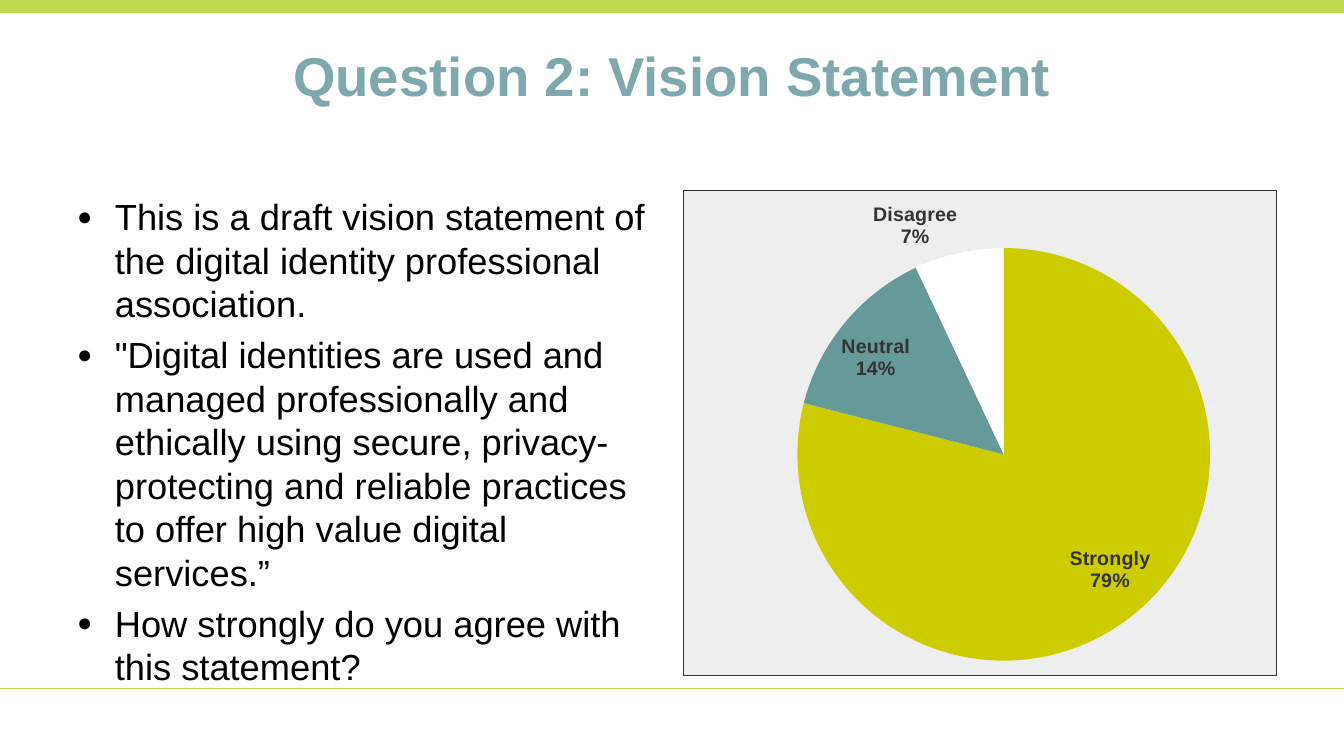
from dataclasses import dataclass

from lxml.etree import SubElement
from pptx import Presentation
from pptx.chart.data import CategoryChartData
from pptx.dml.color import RGBColor
from pptx.enum.chart import XL_CHART_TYPE, XL_LABEL_POSITION
from pptx.enum.shapes import MSO_CONNECTOR, MSO_SHAPE
from pptx.enum.text import MSO_ANCHOR, PP_ALIGN
from pptx.oxml import parse_xml
from pptx.oxml.ns import nsdecls, qn
from pptx.util import Pt


@dataclass(frozen=True)
class Theme:
    font: str = "Arial"
    chart_font: str = "Roboto"
    lime: str = "BAD94B"
    title: str = "7EA8AD"
    body: str = "000000"
    label: str = "333333"
    panel: str = "EEEEEE"
    slices: tuple = ("CCCC00", "669999", "FFFFFF")
    title_size: float = 39
    body_size: float = 25.9
    chart_size: float = 10
    label_size: float = 14


THEME = Theme()
SLIDE_W, SLIDE_H = 960, 540
MARGIN = 48
CONTENT_TOP, CONTENT_W, CONTENT_H = 135.5, 424, 347

BULLETS = [
    "This is a draft vision statement of the digital identity professional association.",
    "\"Digital identities are used and managed professionally and ethically using secure, "
    "privacy-protecting and reliable practices to offer high value digital services.”",
    "How strongly do you agree with this statement?",
]
ANSWERS = {"Strongly": 79, "Neutral": 14, "Disagree": 7}


def style_font(font, size, color, bold=False, name=THEME.font):
    font.name, font.size, font.bold = name, Pt(size), bold
    font.color.rgb = RGBColor.from_string(color)


def add_bar(s, height):
    sp = s.shapes.add_shape(MSO_SHAPE.RECTANGLE, 0, 0, Pt(SLIDE_W), Pt(height))
    sp.shadow.inherit = False
    sp.fill.solid()
    sp.fill.fore_color.rgb = RGBColor.from_string(THEME.lime)
    sp.line.fill.background()


def add_rule(s, y):
    line = s.shapes.add_connector(MSO_CONNECTOR.STRAIGHT, 0, Pt(y), Pt(SLIDE_W), Pt(y))
    line.line.color.rgb = RGBColor.from_string(THEME.lime)
    line.line.width = Pt(0.5)
    SubElement(line._element.spPr, qn("a:effectLst"))


def add_text_box(s, x, y, w, h):
    tf = s.shapes.add_textbox(Pt(x), Pt(y), Pt(w), Pt(h)).text_frame
    tf.word_wrap = True
    return tf


def add_title(s, text):
    tf = add_text_box(s, MARGIN, 12, SLIDE_W - 2 * MARGIN, 83)
    tf.vertical_anchor = MSO_ANCHOR.MIDDLE
    p = tf.paragraphs[0]
    p.text = text
    p.alignment = PP_ALIGN.CENTER
    style_font(p.runs[0].font, THEME.title_size, THEME.title, bold=True)


def add_bullets(s, items):
    tf = add_text_box(s, MARGIN, CONTENT_TOP, CONTENT_W, CONTENT_H)
    for i, item in enumerate(items):
        p = tf.paragraphs[0] if i == 0 else tf.add_paragraph()
        p.text = item
        p.space_before = Pt(5.2 if i else 0)
        pPr = p._p.get_or_add_pPr()
        pPr.set("marL", str(Pt(27)))
        pPr.set("indent", str(Pt(-27)))
        SubElement(pPr, qn("a:buSzPct"), val="70000")
        SubElement(pPr, qn("a:buFont"), typeface=THEME.font)
        SubElement(pPr, qn("a:buChar"), char="●")
        style_font(p.runs[0].font, THEME.body_size, THEME.body)


def panel_properties(border=""):
    return parse_xml(
        f'<c:spPr {nsdecls("c", "a")}><a:solidFill><a:srgbClr val="{THEME.panel}"/>'
        f"</a:solidFill>{border}</c:spPr>")


def add_slice_labels(series):
    labels = series.data_labels
    labels.number_format, labels.number_format_is_linked = "0%", False
    labels.position = XL_LABEL_POSITION.BEST_FIT
    labels.show_value = False
    labels.show_category_name = labels.show_percentage = True
    style_font(labels.font, THEME.label_size, THEME.label, bold=True)
    # Category and percentage on separate lines
    separator = parse_xml(f'<c:separator {nsdecls("c")}>\n</c:separator>')
    labels._element.find(qn("c:showBubbleSize")).addnext(separator)


def place_plot(area):
    for old in area.findall(qn("c:layout")):
        area.remove(old)
    layout = SubElement(area, qn("c:layout"))
    area.insert(0, layout)
    manual = SubElement(layout, qn("c:manualLayout"))
    for tag, val in (("layoutTarget", "inner"), ("xMode", "edge"), ("yMode", "edge"),
                     ("x", "0.19"), ("y", "0.12"), ("w", "0.7"), ("h", "0.85")):
        SubElement(manual, qn(f"c:{tag}"), val=val)


def add_pie(s, answers):
    data = CategoryChartData()
    data.categories = list(answers)
    data.add_series("Series 1", list(answers.values()))
    chart = s.shapes.add_chart(
        XL_CHART_TYPE.PIE, Pt(SLIDE_W - MARGIN - CONTENT_W), Pt(CONTENT_TOP),
        Pt(CONTENT_W), Pt(CONTENT_H), data).chart
    chart.has_title = chart.has_legend = False
    style_font(chart.font, THEME.chart_size, THEME.label, name=THEME.chart_font)
    plot = chart.plots[0]
    plot.vary_by_categories = True

    # Slices and labels
    series = plot.series[0]
    add_slice_labels(series)
    for i, color in enumerate(THEME.slices):
        fill = series.points[i].format.fill
        fill.solid()
        fill.fore_color.rgb = RGBColor.from_string(color)

    # Panel and pie placement
    chart_el = chart._chartSpace.find(qn("c:chart"))
    area = chart_el.find(qn("c:plotArea"))
    area.append(panel_properties())
    chart_el.addnext(panel_properties(
        f'<a:ln w="{Pt(0.25)}"><a:solidFill><a:srgbClr val="{THEME.label}"/>'
        "</a:solidFill></a:ln>"))
    place_plot(area)


def main():
    prs = Presentation()
    prs.slide_width, prs.slide_height = Pt(SLIDE_W), Pt(SLIDE_H)
    s = prs.slides.add_slide(prs.slide_layouts[6])

    # Frame
    add_bar(s, 9.4)
    add_rule(s, 491.8)

    # Content
    add_title(s, "Question 2: Vision Statement")
    add_bullets(s, BULLETS)
    add_pie(s, ANSWERS)

    prs.save("out.pptx")


if __name__ == "__main__":
    main()
